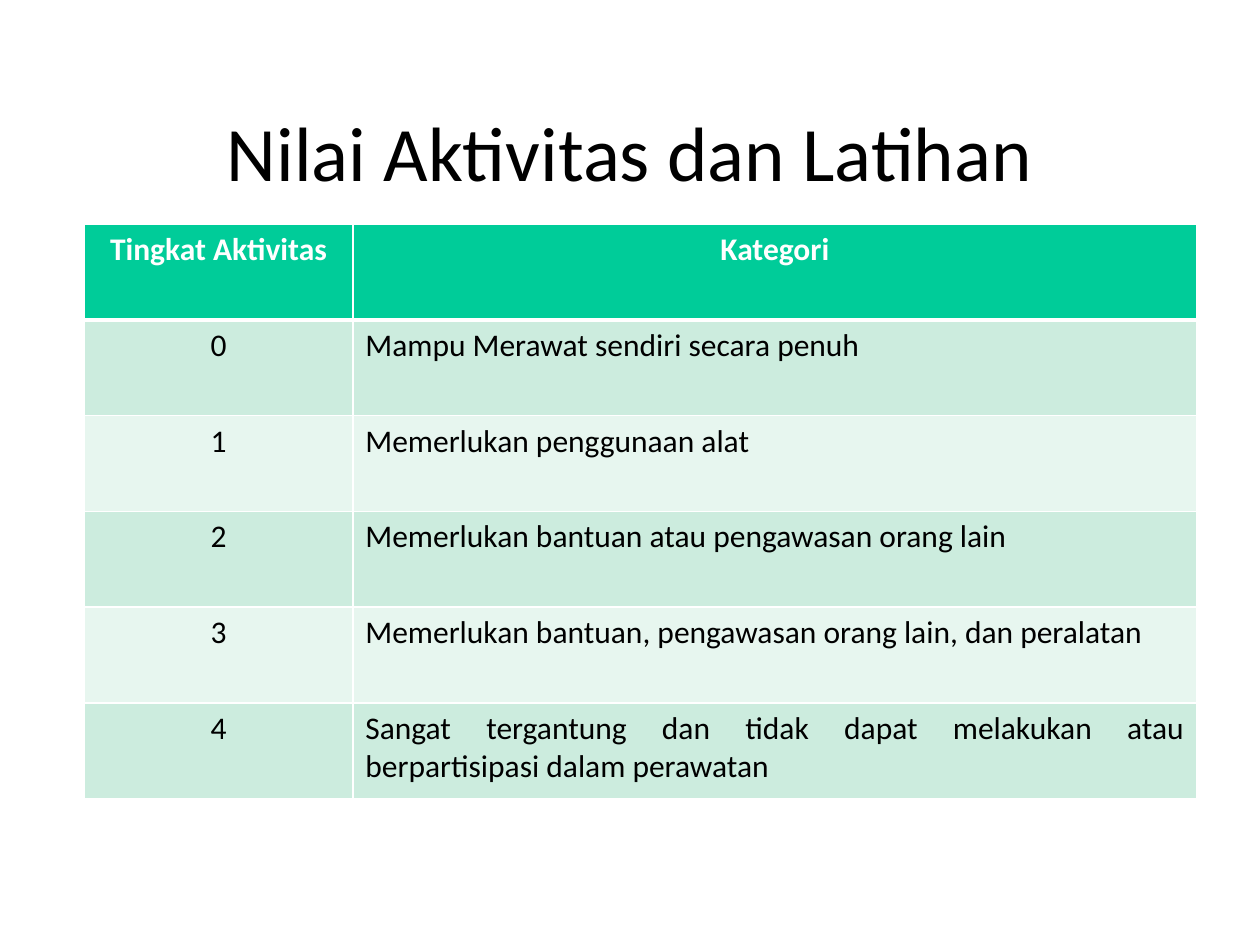
from lxml import etree
from pptx import Presentation
from pptx import util as u
from pptx.dml.color import RGBColor
from pptx.enum import text
from pptx.oxml import ns


def paint(target, color):
    target.solid()
    target.fore_color.rgb = RGBColor.from_string(color)


def add_text(frame, words, size, color, align, bold=False):
    para = frame.paragraphs[0]
    para.alignment = align
    span = para.add_run()
    span.text = words
    span.font.name = "Calibri"
    span.font.size = u.Pt(size)
    span.font.bold = bold
    paint(span.font.fill, color)


deck = Presentation()
deck.slide_width = u.Inches(10)
deck.slide_height = u.Inches(7.5)
page = deck.slides.add_slide(deck.slide_layouts[6])
paint(page.background.fill, "FFFFFF")
align = text.PP_ALIGN

title = page.shapes.add_textbox(u.Inches(0.5), u.Inches(0.84), u.Inches(9), u.Inches(0.71))
title.text_frame.word_wrap = True
title.text_frame.vertical_anchor = text.MSO_ANCHOR.MIDDLE
add_text(title.text_frame, "Nilai Aktivitas dan Latihan", 44, "000000", align.CENTER)

categories = [
    "Mampu Merawat sendiri secara penuh",
    "Memerlukan penggunaan alat",
    "Memerlukan bantuan atau pengawasan orang lain",
    "Memerlukan bantuan, pengawasan orang lain, dan peralatan",
    "Sangat tergantung dan tidak dapat melakukan atau berpartisipasi dalam perawatan",
]
rows = [("Tingkat Aktivitas", "Kategori")]
rows += [(str(level), category) for level, category in enumerate(categories)]
column_widths = [2.13, 6.7]
row_height = 0.76

table = page.shapes.add_table(
    len(rows), len(column_widths), u.Inches(0.67), u.Inches(1.78),
    u.Inches(sum(column_widths)), u.Inches(row_height * len(rows)),
).table
for column, width in zip(table.columns, column_widths):
    column.width = u.Inches(width)

for r, row in enumerate(rows):
    table.rows[r].height = u.Inches(row_height)
    header = r == 0
    fill = "00CC99" if header else ("E7F6EF", "CCECDE")[r % 2]
    for c, words in enumerate(row):
        cell = table.cell(r, c)
        for side in ("lnL", "lnR", "lnT", "lnB"):
            thick = (header and side == "lnB") or (r == 1 and side == "lnT")
            border = etree.SubElement(cell._tc.get_or_add_tcPr(), ns.qn("a:" + side))
            border.set("w", str(u.Pt(3 if thick else 1)))
            solid = etree.SubElement(border, ns.qn("a:solidFill"))
            etree.SubElement(solid, ns.qn("a:srgbClr")).set("val", "FFFFFF")
        paint(cell.fill, fill)
        add_text(
            cell.text_frame, words, 18, "FFFFFF" if header else "000000",
            align.CENTER if header or c == 0 else align.JUSTIFY, header,
        )

deck.save("out.pptx")
